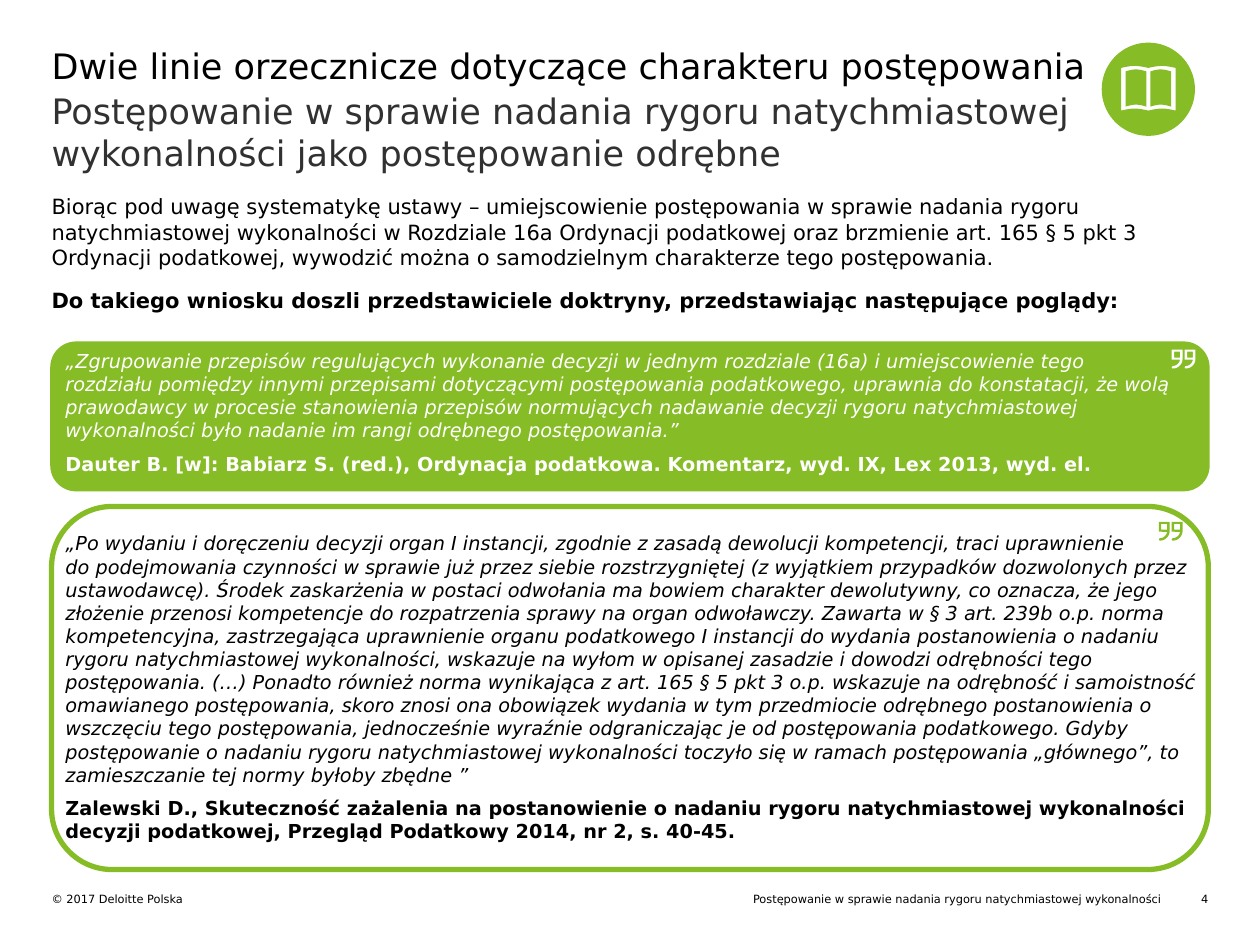
import math
from dataclasses import dataclass

import pptx
import pptx.util
import pptx.dml.color
import pptx.enum.shapes
import pptx.enum.text
import pptx.oxml.ns
from lxml import etree

Cm, Pt = pptx.util.Cm, pptx.util.Pt
Rgb = pptx.dml.color.RGBColor
Align = pptx.enum.text.PP_ALIGN
Fit = pptx.enum.text.MSO_AUTO_SIZE
Kind = pptx.enum.shapes.MSO_SHAPE


@dataclass(frozen=True)
class Theme:
    font: str = "DejaVu Sans"
    green: Rgb = Rgb(0x86, 0xBC, 0x25)
    black: Rgb = Rgb(0, 0, 0)
    grey: Rgb = Rgb(0x31, 0x31, 0x31)
    white: Rgb = Rgb(255, 255, 255)
    head: float = 20
    body: float = 12
    quote: float = 11
    foot: float = 6.5


LOOK = Theme()
LEFT, WIDE = 1.04, 23.32
UNIT = Cm(0.001)  # outline points are rounded to this step

TITLE = "Dwie linie orzecznicze dotyczące charakteru postępowania"
TOPIC = "Postępowanie w sprawie nadania rygoru natychmiastowej wykonalności"
LEAD = (
    "Biorąc pod uwagę systematykę ustawy – umiejscowienie postępowania w sprawie "
    "nadania rygoru natychmiastowej wykonalności w Rozdziale 16a Ordynacji podatkowej "
    "oraz brzmienie art. 165 § 5 pkt 3 Ordynacji podatkowej, wywodzić można o "
    "samodzielnym charakterze tego postępowania."
)
CLAIM = (
    "Do takiego wniosku doszli przedstawiciele doktryny, przedstawiając "
    "następujące poglądy:"
)
FIRST = (
    "„Zgrupowanie przepisów regulujących wykonanie decyzji w jednym rozdziale (16a) "
    "i umiejscowienie tego\vrozdziału pomiędzy innymi przepisami dotyczącymi "
    "postępowania podatkowego, uprawnia do konstatacji, że wolą prawodawcy w procesie "
    "stanowienia przepisów normujących nadawanie decyzji rygoru natychmiastowej "
    "wykonalności było nadanie im rangi odrębnego postępowania.”",
    "Dauter B. [w]: Babiarz S. (red.), Ordynacja podatkowa. Komentarz, wyd. IX, "
    "Lex 2013, wyd. el.",
)
# The long quote is kept in two parts
RULE = (
    "„Po wydaniu i doręczeniu decyzji organ I instancji, zgodnie z zasadą dewolucji "
    "kompetencji, traci uprawnienie\vdo podejmowania czynności w sprawie już przez "
    "siebie rozstrzygniętej (z wyjątkiem przypadków dozwolonych przez ustawodawcę). "
    "Środek zaskarżenia w postaci odwołania ma bowiem charakter dewolutywny, co "
    "oznacza, że jego złożenie przenosi kompetencje do rozpatrzenia sprawy na organ "
    "odwoławczy. Zawarta w § 3 art. 239b o.p. norma kompetencyjna, zastrzegająca "
    "uprawnienie organu podatkowego I instancji do wydania postanowienia o nadaniu "
    "rygoru natychmiastowej wykonalności, wskazuje na wyłom w opisanej zasadzie i "
    "dowodzi odrębności tego postępowania."
)
NORM = (
    "(…) Ponadto również norma wynikająca z "
    "art. 165 § 5 pkt 3 o.p. wskazuje na odrębność i samoistność omawianego "
    "postępowania, skoro znosi ona obowiązek wydania w tym przedmiocie odrębnego "
    "postanowienia o wszczęciu tego postępowania, jednocześnie wyraźnie odgraniczając "
    "je od postępowania podatkowego. Gdyby postępowanie o nadaniu rygoru "
    "natychmiastowej wykonalności toczyło się w ramach postępowania „głównego”, to "
    "zamieszczanie tej normy byłoby zbędne ”"
)
SECOND = (
    " ".join((RULE, NORM)),
    "Zalewski D., Skuteczność zażalenia na postanowienie o nadaniu rygoru "
    "natychmiastowej wykonalności decyzji podatkowej, Przegląd Podatkowy 2014, nr 2, "
    "s. 40-45.",
)


def fill_text(frame, lines, size, color, align=Align.LEFT, above=0, below=0,
              slant=False, fit=Fit.NONE):
    """Write the lines; every line after the first is bold and upright."""
    frame.margin_left = frame.margin_right = 0
    frame.margin_top = frame.margin_bottom = 0
    frame.word_wrap, frame.auto_size = True, fit
    frame.vertical_anchor = pptx.enum.text.MSO_ANCHOR.TOP
    frame.text = "\n".join(lines)
    for i, para in enumerate(frame.paragraphs):
        para.alignment = align
        para.space_before = Pt(above if i else 0)
        para.space_after = Pt(below)
        for run in para.runs:
            font = run.font
            font.name, font.size = LOOK.font, Pt(size)
            font.color.rgb = color
            font.bold, font.italic = i > 0, slant and i == 0


def place(shape, x, y, w, h):
    shape.left, shape.top, shape.width, shape.height = map(Cm, (x, y, w, h))


def fill_holder(shape, box, lines, size, color, below=0):
    place(shape, *box)
    fill_text(shape.text_frame, lines, size, color, below=below)
    for para in shape.text_frame.paragraphs:
        props = para._p.get_or_add_pPr()
        props.set("marL", "0")
        props.set("indent", "0")
        etree.SubElement(props, pptx.oxml.ns.qn("a:buNone"))


def add_text(slide, box, lines, size, color, **opts):
    shape = slide.shapes.add_textbox(*map(Cm, box))
    fill_text(shape.text_frame, lines, size, color, **opts)


def add_panel(slide, y, h, fill, line):
    shape = slide.shapes.add_shape(
        Kind.ROUNDED_RECTANGLE, Cm(LEFT), Cm(y), Cm(WIDE), Cm(h))
    shape.shadow.inherit = False
    shape.fill.solid()
    shape.fill.fore_color.rgb = fill
    shape.line.color.rgb = LOOK.green
    shape.line.width = Pt(line)


def add_form(shapes, x, y, rings, color):
    """Draw closed rings, in cm around (x, y); inner rings cut holes."""
    rings = [[((x + a) * 1000, (y + b) * 1000) for a, b in ring] for ring in rings]
    pen = shapes.build_freeform(*rings[0][0], scale=UNIT)
    for i, ring in enumerate(rings):
        if i:
            pen.move_to(*ring[0])
        pen.add_line_segments(ring[1:], close=True)
    form = pen.convert_to_shape()
    form.shadow.inherit = False
    form.fill.solid()
    form.fill.fore_color.rgb = color
    form.line.fill.background()


def arc(x, y, r, start, end, steps=12):
    turns = [math.radians(start + (end - start) * i / steps) for i in range(steps + 1)]
    return [(x + r * math.cos(t), y + r * math.sin(t)) for t in turns]


def bow(start, end, y, rise=0.04, steps=8):
    return [(start + (end - start) * i / steps,
             y - rise * math.sin(math.pi * i / steps)) for i in range(steps + 1)]


def add_book(slide, x, y):
    disc = arc(0, 0, 0.94, 0, 360, 72)[:-1]
    cover = (bow(-0.55, 0, -0.43) + bow(0, 0.55, -0.43)
             + bow(0.55, 0, 0.43) + bow(0, -0.55, 0.43))
    pages = [bow(a, b, -0.36) + bow(b, a, 0.35)
             for a, b in ((-0.46, -0.04), (0.04, 0.46))]
    add_form(slide.shapes, x, y, [disc, cover, *pages], LOOK.green)


def add_marks(slide, x, y, color):
    edge = ([(0, 0), (0.22, 0)] + arc(0.02, 0.18, 0.2, 0, 90)
            + [(0, 0.36)] + arc(0.02, 0.18, 0.15, 90, 8) + [(0, 0.2)])
    hole = [(0.05, 0.04), (0.17, 0.04), (0.17, 0.16), (0.05, 0.16)]
    group = slide.shapes.add_group_shape()
    for i in range(2):
        add_form(group.shapes, x + 0.26 * i, y, [edge, hole], color)


def main():
    deck = pptx.Presentation()
    deck.slide_width, deck.slide_height = Cm(25.4), Cm(19.05)
    slide = deck.slides.add_slide(deck.slide_layouts[3])
    title, topic, body = slide.placeholders

    # Heading and introduction
    fill_holder(title, (LEFT, 0.89, WIDE, 0.93), [TITLE], LOOK.head, LOOK.black)
    fill_holder(topic, (LEFT, 1.81, WIDE, 2.1),
                [TOPIC + " jako postępowanie odrębne"], LOOK.head, LOOK.grey)
    fill_holder(body, (LEFT, 3.91, WIDE, 2.8), [LEAD, CLAIM], LOOK.body,
                LOOK.black, below=10)
    add_book(slide, 23.15, 1.8)

    # Quotes
    quote = dict(size=LOOK.quote, above=6, slant=True, fit=Fit.SHAPE_TO_FIT_TEXT)
    add_panel(slide, 6.91, 2.97, LOOK.green, 1.5)
    add_text(slide, (1.32, 7.04, 23.04, 2.57), FIRST, color=LOOK.white, **quote)
    add_marks(slide, 23.62, 7.05, LOOK.white)
    add_panel(slide, 10.21, 7.32, LOOK.white, 3)
    add_text(slide, (1.32, 10.72, 23.04, 6.32), SECOND, color=LOOK.black, **quote)
    add_marks(slide, 23.36, 10.52, LOOK.green)

    # Footer
    for x, w, text, align in (
        (LEFT, 11.15, "© 2017 Deloitte Polska", Align.LEFT),
        (13.21, 10.21, TOPIC, Align.RIGHT),
        (23.72, 0.64, "4", Align.RIGHT),
    ):
        add_text(slide, (x, 17.98, w, 0.56), [text], LOOK.foot, LOOK.black, align=align)

    deck.save("out.pptx")


if __name__ == "__main__":
    main()
